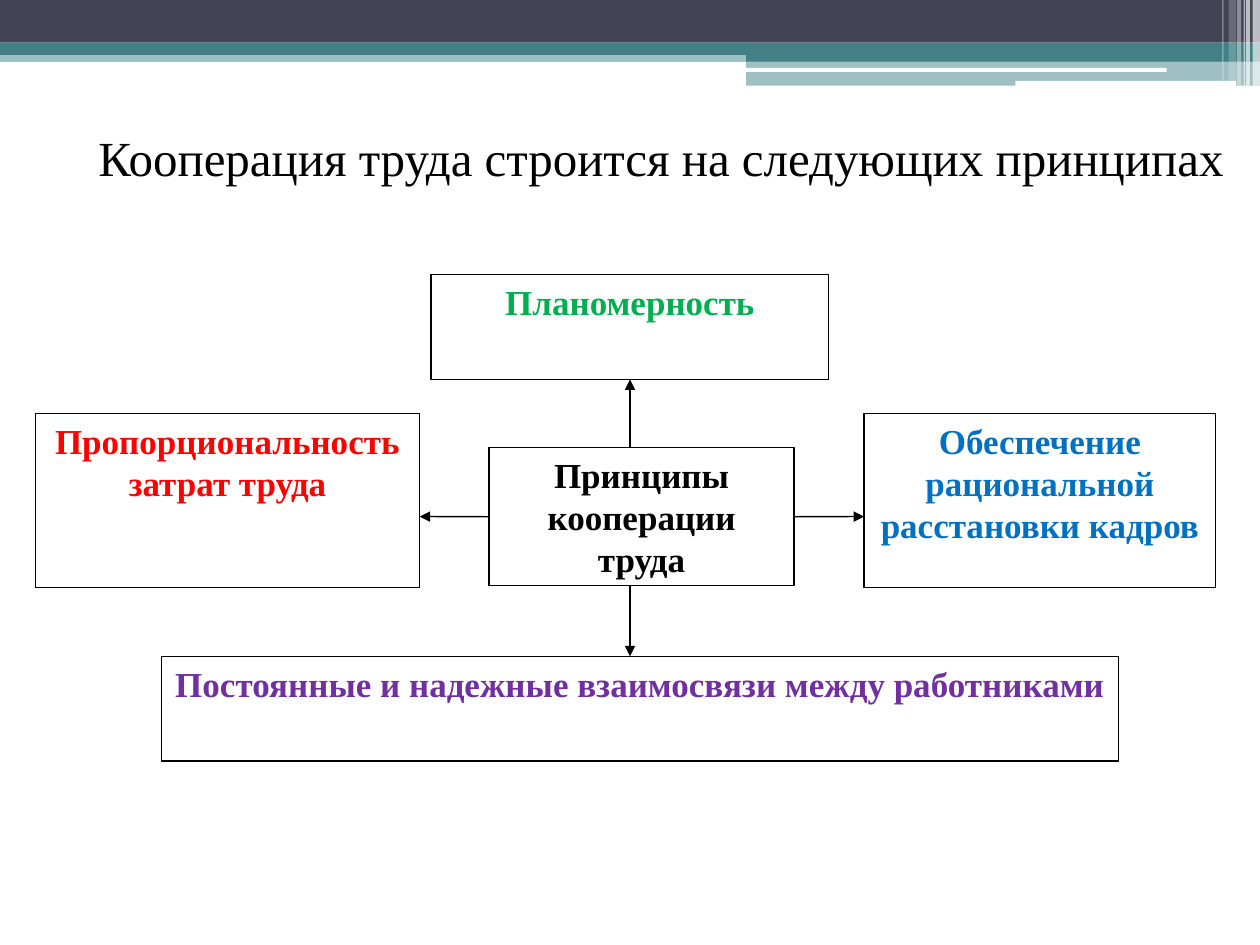
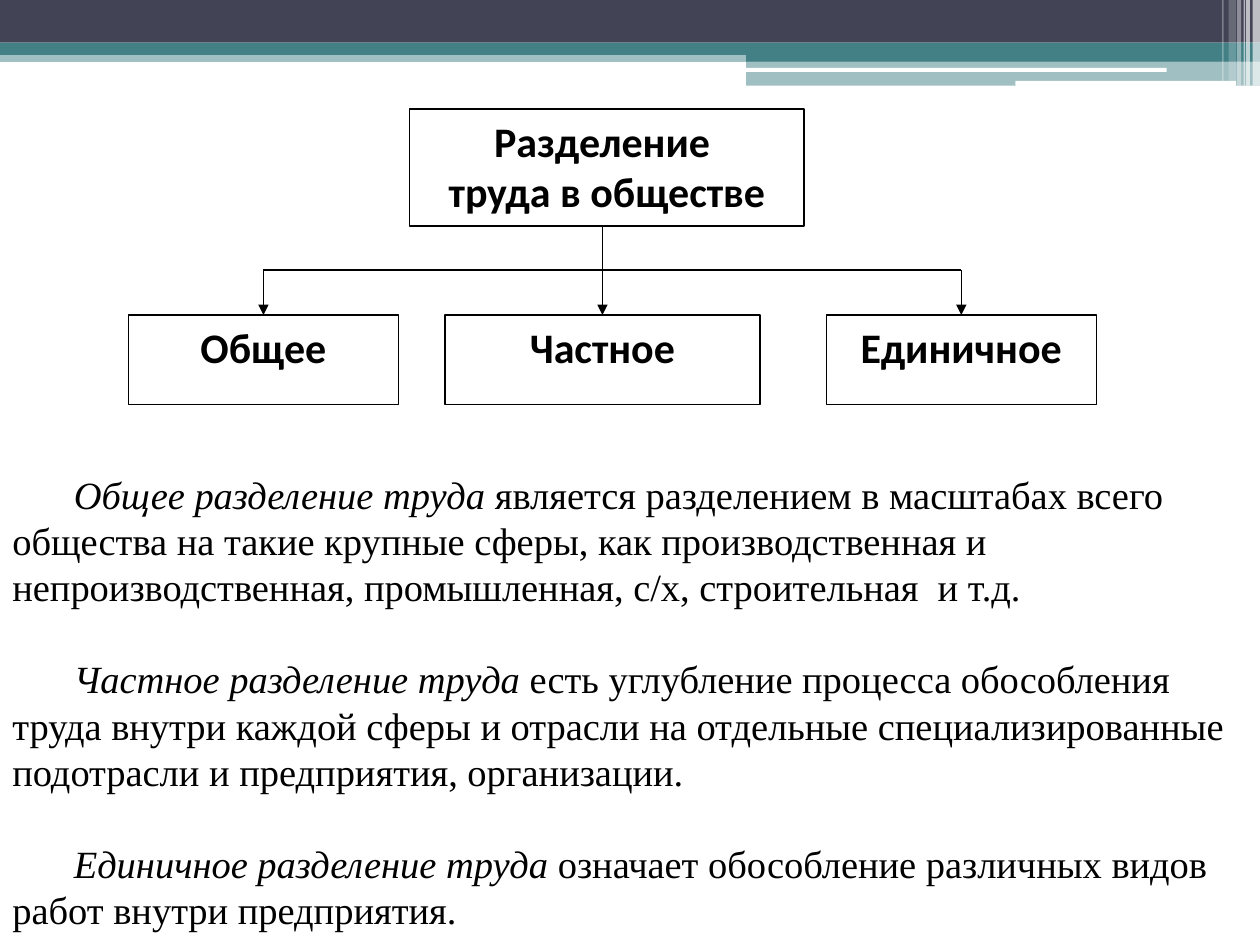
from typing import NamedTuple, Optional

from pptx import Presentation
from pptx import util as u
from pptx.dml.color import RGBColor
from pptx.enum import shapes, text
from pptx.oxml import ns, xmlchemy

COLOURS = {
    "white": "FFFFFF",
    "black": "000000",
    "slate": "424456",
    "teal": "438086",
    "green": "00B050",
    "red": "FF0000",
    "blue": "0070C0",
    "purple": "7030A0",
}
SERIF = "Times New Roman"
SANS = "Calibri"
SERIF_LEADING = 1.2
FIRST_LINE = u.Cm(1.24)
TITLE_ONLY, BLANK = 5, 6


class Band(NamedTuple):
    """A borderless strip of the header; lengths in cm, opacity in percent."""
    left: float
    top: float
    width: float
    height: float
    colour: str = "white"
    opacity: int = 100
    rounded: bool = False


class Box(NamedTuple):
    """A framed block of a diagram; lengths in cm."""
    left: float
    top: float
    width: float
    height: float
    lines: tuple[str, ...]
    colour: str = "black"

    @property
    def middle_x(self) -> float:
        return self.left + self.width / 2

    @property
    def middle_y(self) -> float:
        return self.top + self.height / 2

    @property
    def bottom(self) -> float:
        return self.top + self.height


class Style(NamedTuple):
    font: str
    size: float
    bold: bool = False


class Joint(NamedTuple):
    """A block and the number of the side where a connector meets it."""
    block: object
    side: int


HEADER_BANDS = [
    Band(0, 1.02, 25.4, 0.23, "teal", 50),
    Band(0, 0, 25.4, 0.86, "slate"),
    Band(0, 0.86, 25.4, 0.25, "teal"),
    Band(15.04, 0.99, 10.36, 0.25, "teal"),
    Band(15.04, 1.22, 10.36, 0.51, "teal", 50),
    Band(15.01, 1.37, 8.51, 0.08, rounded=True),
    Band(20.47, 1.63, 4.45, 0.1, rounded=True),
    Band(25.25, 0, 0.15, 1.73, opacity=65),
    Band(25.12, 0, 0.08, 1.73, opacity=65),
    Band(25.07, 0, 0.03, 1.73, opacity=60),
    Band(24.94, 0, 0.08, 1.73, opacity=40),
    Band(24.77, 0, 0.15, 1.63, opacity=20),
    Band(24.64, 0, 0.03, 1.63, opacity=30),
]


def rgb(name: str) -> RGBColor:
    return RGBColor.from_string(COLOURS[name])


def add_block(slide, left: float, top: float, width: float, height: float,
              fill: str, rounded: bool = False):
    kind = (shapes.MSO_SHAPE.ROUNDED_RECTANGLE if rounded
            else shapes.MSO_SHAPE.RECTANGLE)
    block = slide.shapes.add_shape(
        kind, u.Cm(left), u.Cm(top), u.Cm(width), u.Cm(height))
    block.shadow.inherit = False
    block.fill.solid()
    block.fill.fore_color.rgb = rgb(fill)
    block.line.fill.background()
    return block


def add_run(paragraph, wording: str, style: Style, colour: str = "black",
            italic: bool = False) -> None:
    run = paragraph.add_run()
    run.text = wording
    run.font.name = style.font
    run.font.size = u.Pt(style.size)
    run.font.bold = style.bold
    run.font.italic = italic
    run.font.color.rgb = rgb(colour)
    if style.font == SERIF:
        paragraph.line_spacing = u.Pt(style.size * SERIF_LEADING)


def next_paragraph(frame, index: int):
    return frame.add_paragraph() if index else frame.paragraphs[0]


def indent_first_line(paragraph) -> None:
    properties = paragraph._p.get_or_add_pPr()
    properties.set("marL", "0")
    properties.set("indent", str(int(FIRST_LINE)))


def draw_header(slide) -> None:
    for band in HEADER_BANDS:
        strip = add_block(slide, *band[:5], rounded=band.rounded)
        if band.opacity < 100:
            colour = strip.element.spPr.find(".//" + ns.qn("a:srgbClr"))
            alpha = xmlchemy.OxmlElement("a:alpha")
            alpha.set("val", str(band.opacity * 1000))
            colour.append(alpha)


def draw_box(slide, box: Box, style: Style):
    block = add_block(slide, *box[:4], fill="white")
    block.line.color.rgb = rgb("black")
    block.line.width = u.Pt(0.75)
    frame = block.text_frame
    frame.word_wrap = True
    frame.vertical_anchor = text.MSO_ANCHOR.TOP
    for index, line in enumerate(box.lines):
        paragraph = next_paragraph(frame, index)
        paragraph.alignment = text.PP_ALIGN.CENTER
        add_run(paragraph, line, style, box.colour)
    return block


def draw_line(slide, start: tuple[float, float], end: tuple[float, float],
              arrow: bool = True, begin: Optional[Joint] = None,
              finish: Optional[Joint] = None) -> None:
    line = slide.shapes.add_connector(
        shapes.MSO_CONNECTOR.STRAIGHT, *(u.Cm(value) for value in start + end))
    if begin:
        line.begin_connect(begin.block, begin.side)
    if finish:
        line.end_connect(finish.block, finish.side)
    line.line.color.rgb = rgb("black")
    line.line.width = u.Pt(0.75)
    properties = line.element.spPr
    if arrow:
        head = xmlchemy.OxmlElement("a:tailEnd")
        head.set("type", "triangle")
        properties.find(ns.qn("a:ln")).append(head)
    properties.append(xmlchemy.OxmlElement("a:effectLst"))


def build_cooperation(deck) -> None:
    slide = deck.slides.add_slide(deck.slide_layouts[TITLE_ONLY])
    draw_header(slide)

    # Title
    title = slide.shapes.title
    title.left, title.top = u.Cm(0.36), u.Cm(2.44)
    title.width, title.height = u.Cm(24.69), u.Cm(1.45)
    frame = title.text_frame
    frame.word_wrap = False
    frame.auto_size = text.MSO_AUTO_SIZE.NONE
    frame.vertical_anchor = text.MSO_ANCHOR.MIDDLE
    heading = frame.paragraphs[0]
    heading.alignment = text.PP_ALIGN.CENTER
    indent_first_line(heading)
    add_run(heading, "Кооперация труда строится на следующих принципах",
            Style(SERIF, 28))

    # Principles around the centre
    core = Box(9.86, 9.02, 6.15, 2.79, ("Принципы", "кооперации труда"))
    planning = Box(8.69, 5.54, 8.02, 2.11, ("Планомерность",), "green")
    proportion = Box(0.71, 8.33, 7.75, 3.51,
                     ("Пропорциональность затрат труда",), "red")
    staffing = Box(17.42, 8.33, 7.09, 3.51,
                   ("Обеспечение рациональной расстановки кадров",), "blue")
    relations = Box(
        3.25, 13.23, 19.3, 2.11,
        ("Постоянные и надежные взаимосвязи между работниками",), "purple")
    style = Style(SERIF, 20, bold=True)
    core_block, planning_block, *_ = [
        draw_box(slide, box, style)
        for box in (core, planning, proportion, staffing, relations)]

    # Arrows from the centre
    axis = planning.middle_x
    draw_line(slide, (axis, core.top), (axis, planning.bottom),
              finish=Joint(planning_block, 2))
    draw_line(slide, (core.left + core.width, core.middle_y),
              (staffing.left, core.middle_y), begin=Joint(core_block, 3))
    draw_line(slide, (core.left, core.middle_y),
              (proportion.left + proportion.width, core.middle_y),
              begin=Joint(core_block, 1))
    draw_line(slide, (axis, core.bottom), (axis, relations.top))


def build_division(deck) -> None:
    slide = deck.slides.add_slide(deck.slide_layouts[BLANK])
    draw_header(slide)

    # Division of labour and its kinds
    style = Style(SANS, 24, bold=True)
    society = Box(8.26, 2.2, 7.95, 2.36, ("Разделение ", "труда в обществе"))
    draw_box(slide, society, style)
    kinds = [Box(left, 6.35, width, 1.8, (name,)) for left, width, name in (
        (2.59, 5.44, "Общее"),
        (8.97, 6.35, "Частное"),
        (16.66, 5.44, "Единичное"))]
    kind_blocks = [draw_box(slide, kind, style) for kind in kinds]

    # Branches
    general, partial, single = kinds
    fork = 5.44
    draw_line(slide, (general.middle_x, fork), (single.middle_x, fork),
              arrow=False)
    for kind, block in zip(kinds, kind_blocks):
        start = society.bottom if kind is partial else fork
        draw_line(slide, (kind.middle_x, start), (kind.middle_x, kind.top),
                  finish=Joint(block, 0))

    # Definitions
    definitions = [
        ("Общее разделение труда",
         " является разделением в масштабах всего общества на такие крупные "
         "сферы, как производственная и непроизводственная, промышленная, "
         "с/х, строительная  и т.д."),
        ("Частное разделение труда",
         " есть углубление процесса обособления труда внутри каждой сферы и "
         "отрасли на отдельные специализированные подотрасли и предприятия, "
         "организации."),
        ("Единичное разделение труда",
         " означает обособление различных видов работ внутри предприятия."),
    ]
    body = Style(SERIF, 22)
    frame = add_block(slide, 0, 9.32, 25.4, 9.65, "white").text_frame
    frame.word_wrap = True
    frame.vertical_anchor = text.MSO_ANCHOR.MIDDLE
    for index, (term, meaning) in enumerate(definitions):
        paragraph = next_paragraph(frame, index)
        paragraph.alignment = text.PP_ALIGN.LEFT
        indent_first_line(paragraph)
        if index:
            paragraph.space_before = u.Pt(body.size * SERIF_LEADING)
        add_run(paragraph, term, body, italic=True)
        add_run(paragraph, meaning, body)


def main() -> None:
    deck = Presentation()
    deck.slide_width, deck.slide_height = u.Cm(25.4), u.Cm(19.05)
    build_cooperation(deck)
    build_division(deck)
    deck.save("out.pptx")


if __name__ == "__main__":
    main()
